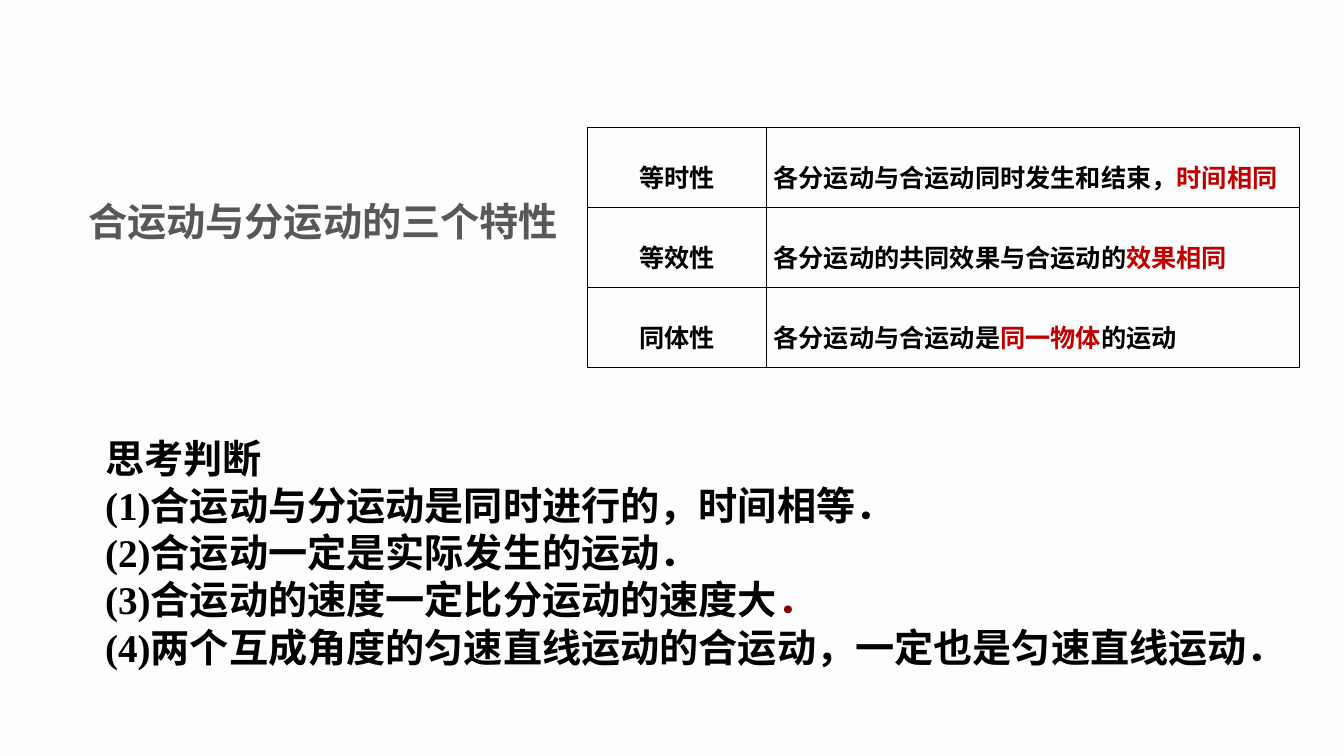
from dataclasses import dataclass

from lxml.etree import SubElement
from pptx import Presentation
from pptx.dml.color import RGBColor
from pptx.enum.text import MSO_ANCHOR as Anchor, PP_ALIGN as Align
from pptx.oxml.ns import qn
from pptx.slide import Slide
from pptx.table import _Cell as Cell
from pptx.text.text import _Paragraph as Paragraph
from pptx.util import Pt

COLORS = {
    "background": "FCFDFD",
    "title": "595859",
    "text": "000000",
    "key": "C00000",
    "stop": "8A0000",
}
SANS = "Noto Sans CJK SC"
SERIF = "Times New Roman"
FIRST_LINE_INDENT = Pt(56)
ROW_HEIGHT = Pt(57.2)
COLUMN_WIDTHS = (Pt(128), Pt(381))


@dataclass(frozen=True)
class Span:
    text: str
    color: str = "text"
    latin: str = SANS


@dataclass(frozen=True)
class Block:
    left: float
    top: float
    width: float
    height: float
    anchor: Anchor
    lines: tuple[tuple[Span, ...], ...]


@dataclass(frozen=True)
class Property:
    name: str
    meaning: tuple[Span, ...]


TITLE = Block(0, 137.5, 412, 63, Anchor.TOP,
              ((Span("合运动与分运动的三个特性", "title"),),))

QUESTIONS = Block(12, 289, 960, 211, Anchor.MIDDLE, (
    (Span("思考判断"),),
    (Span("(1)合运动与分运动是同时进行的，时间相等．", latin=SERIF),),
    (Span("(2)合运动一定是实际发生的运动．", latin=SERIF),),
    (Span("(3)合运动的速度一定比分运动的速度大", latin=SERIF),
     Span("．", "stop", SERIF)),
    (Span("(4)两个互成角度的匀速直线运动的合运动，一定也是匀速直线运动．",
          latin=SERIF),),
))

PROPERTIES = (
    Property("等时性", (Span("各分运动与合运动同时发生和结束，"),
                     Span("时间相同", "key"))),
    Property("等效性", (Span("各分运动的共同效果与合运动的"),
                     Span("效果相同", "key"))),
    Property("同体性", (Span("各分运动与合运动是"), Span("同一物体", "key"),
                     Span("的运动"))),
)


def add_spans(paragraph: Paragraph, spans: tuple[Span, ...], size: float) -> None:
    for span in spans:
        run = paragraph.add_run()
        run.text = span.text
        run.font.size = Pt(size)
        run.font.bold = True
        run.font.color.rgb = RGBColor.from_string(COLORS[span.color])
        run.font.name = span.latin
        SubElement(run.font._element, qn("a:ea"), typeface=SANS)


def add_block(slide: Slide, block: Block) -> None:
    box = slide.shapes.add_textbox(Pt(block.left), Pt(block.top),
                                   Pt(block.width), Pt(block.height))
    frame = box.text_frame
    frame.word_wrap = True
    frame.vertical_anchor = block.anchor
    for index, spans in enumerate(block.lines):
        paragraph = frame.add_paragraph() if index else frame.paragraphs[0]
        paragraph._p.get_or_add_pPr().set("indent", str(FIRST_LINE_INDENT))
        add_spans(paragraph, spans, 28)


def add_borders(cell: Cell) -> None:
    """Draw all four sides; they must come before the fill in the cell XML."""
    properties = cell._tc.get_or_add_tcPr()
    for side in ("lnL", "lnR", "lnT", "lnB"):
        line = SubElement(properties, qn(f"a:{side}"), w=str(Pt(1)))
        fill = SubElement(line, qn("a:solidFill"))
        SubElement(fill, qn("a:srgbClr"), val=COLORS["text"])


def fill_cell(cell: Cell, spans: tuple[Span, ...], align: Align) -> None:
    add_borders(cell)
    cell.fill.background()
    cell.vertical_anchor = Anchor.MIDDLE
    cell.margin_left = cell.margin_right = Pt(5)
    cell.margin_top = cell.margin_bottom = 0
    paragraph = cell.text_frame.paragraphs[0]
    paragraph.alignment = align
    paragraph.line_spacing = 1.5
    add_spans(paragraph, spans, 18)


def add_property_table(slide: Slide) -> None:
    table = slide.shapes.add_table(
        len(PROPERTIES), len(COLUMN_WIDTHS), Pt(419.5), Pt(90.8),
        sum(COLUMN_WIDTHS), ROW_HEIGHT * len(PROPERTIES)).table
    table.first_row = table.horz_banding = False
    for column, width in zip(table.columns, COLUMN_WIDTHS):
        column.width = width
    for index, entry in enumerate(PROPERTIES):
        table.rows[index].height = ROW_HEIGHT
        fill_cell(table.cell(index, 0), (Span(entry.name),), Align.CENTER)
        fill_cell(table.cell(index, 1), entry.meaning, Align.JUSTIFY)


def main() -> None:
    deck = Presentation()
    deck.slide_width, deck.slide_height = Pt(960), Pt(540)
    slide = deck.slides.add_slide(deck.slide_layouts[6])
    background = slide.background.fill
    background.solid()
    background.fore_color.rgb = RGBColor.from_string(COLORS["background"])
    add_block(slide, QUESTIONS)
    add_property_table(slide)
    add_block(slide, TITLE)
    deck.save("out.pptx")


if __name__ == "__main__":
    main()
